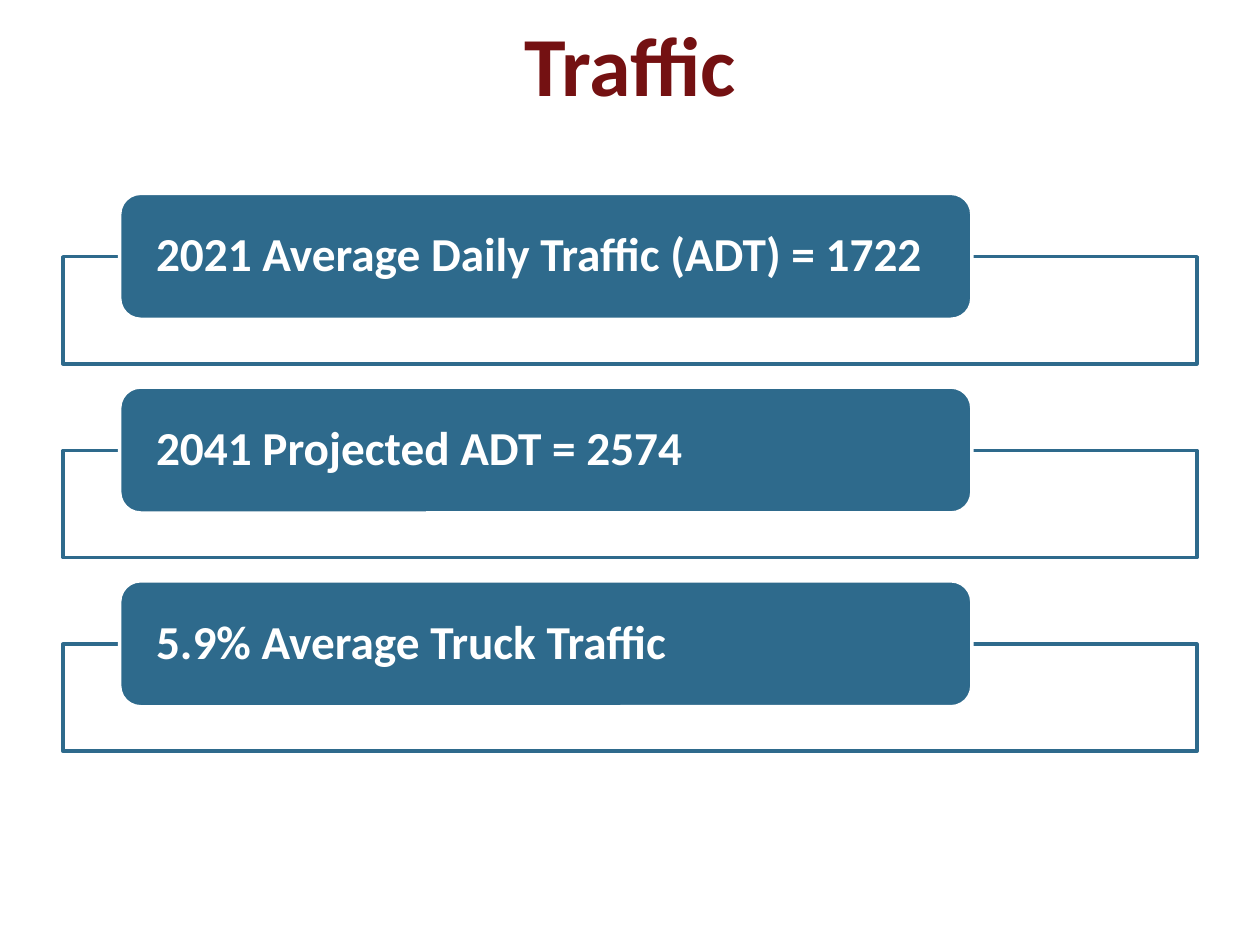
from pptx import Presentation
from pptx.dml.color import RGBColor
from pptx.enum.shapes import MSO_SHAPE
from pptx.enum.text import MSO_ANCHOR, PP_ALIGN
from pptx.util import Pt

BLUE = RGBColor(0x2E, 0x6A, 0x8C)
MAROON = RGBColor(0x74, 0x11, 0x12)
WHITE = RGBColor(0xFF, 0xFF, 0xFF)

TITLE_ONLY = 5
MARGIN = 36
CONTENT_WIDTH = 648
FIRST_CARD_TOP = 110.5
ROW_STEP = 110.7
FRAME_OFFSET = 36.2

FACTS = [
    "2021 Average Daily Traffic (ADT) = 1722",
    "2041 Projected ADT = 2574",
    "5.9% Average Truck Traffic",
]


class SlideBuilder:
    font_name = "Calibri"
    line_width = 2

    def __init__(self, slide):
        self.slide = slide

    def format_text(self, paragraph, size, color):
        for run in paragraph.runs:
            run.font.name = self.font_name
            run.font.size = Pt(size)
            run.font.bold = True
            run.font.color.rgb = color

    def title(self, text, left, top, width, height):
        shape = self.slide.shapes.title
        shape.left, shape.top = Pt(left), Pt(top)
        shape.width, shape.height = Pt(width), Pt(height)
        text_frame = shape.text_frame
        text_frame.text = text
        text_frame.vertical_anchor = MSO_ANCHOR.MIDDLE
        paragraph = text_frame.paragraphs[0]
        paragraph.alignment = PP_ALIGN.CENTER
        self.format_text(paragraph, 48, MAROON)

    def box(self, kind, left, top, width, height, fill, line):
        shape = self.slide.shapes.add_shape(
            kind, Pt(left), Pt(top), Pt(width), Pt(height))
        shape.shadow.inherit = False
        shape.fill.solid()
        shape.fill.fore_color.rgb = fill
        shape.line.color.rgb = line
        shape.line.width = Pt(self.line_width)
        return shape

    def frame(self, top):
        self.box(MSO_SHAPE.RECTANGLE, MARGIN, top, CONTENT_WIDTH, 61.2, WHITE, BLUE)

    def card(self, text, top):
        shape = self.box(MSO_SHAPE.ROUNDED_RECTANGLE, 68.4, top, 487, 72, BLUE, WHITE)
        text_frame = shape.text_frame
        text_frame.text = text
        text_frame.word_wrap = True
        text_frame.vertical_anchor = MSO_ANCHOR.MIDDLE
        # The rounded corners add a small inset of their own.
        text_frame.margin_left = text_frame.margin_right = Pt(17.3)
        text_frame.margin_top = text_frame.margin_bottom = 0
        paragraph = text_frame.paragraphs[0]
        paragraph.alignment = PP_ALIGN.LEFT
        paragraph.line_spacing = 0.9
        self.format_text(paragraph, 27, WHITE)


def main():
    presentation = Presentation()
    presentation.slide_width, presentation.slide_height = Pt(720), Pt(540)
    slide = presentation.slides.add_slide(presentation.slide_layouts[TITLE_ONLY])
    builder = SlideBuilder(slide)
    builder.title("Traffic", MARGIN, 0, CONTENT_WIDTH, 72)
    for row, fact in enumerate(FACTS):
        card_top = FIRST_CARD_TOP + row * ROW_STEP
        builder.frame(card_top + FRAME_OFFSET)
        builder.card(fact, card_top)
    presentation.save("out.pptx")


if __name__ == "__main__":
    main()
